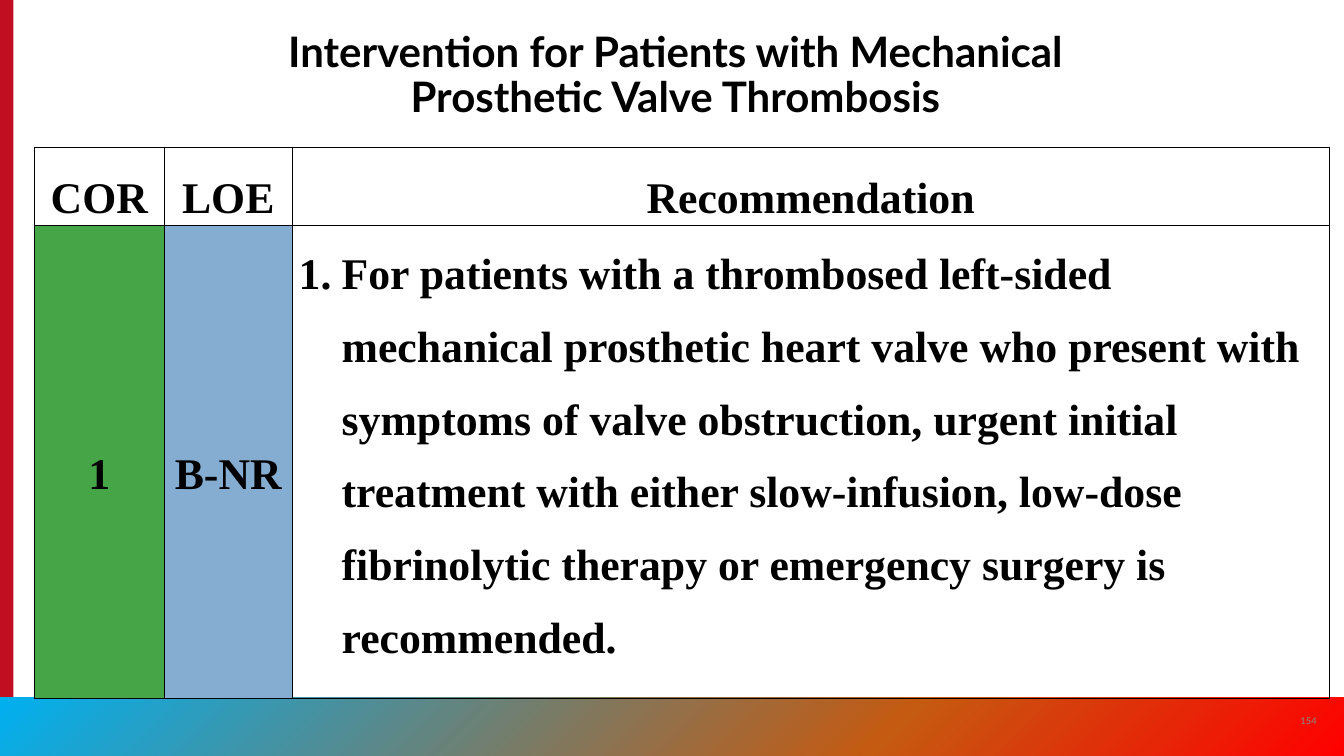
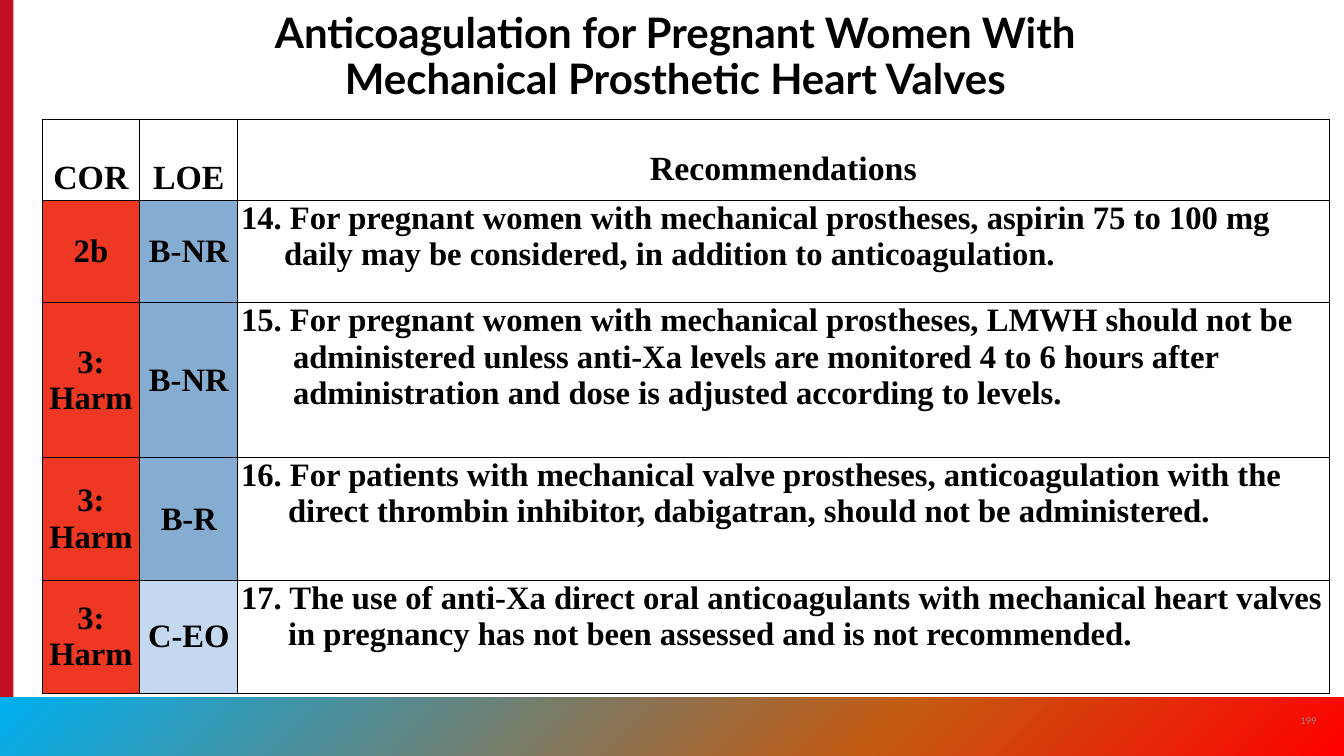
from lxml.etree import SubElement
from pptx import Presentation
from pptx.dml.color import RGBColor as RGB
from pptx.enum.shapes import MSO_SHAPE as SHAPE
from pptx.enum.text import MSO_ANCHOR as ANCHOR, PP_ALIGN as ALIGN
from pptx.oxml import parse_xml
from pptx.oxml.ns import nsdecls, qn
from pptx.util import Cm, Pt

COLORS = {
    "text": "000000", "border": "000000", "number": "8A8B8A", "bar": "C10E21",
    "1": "45A547", "2b": "EF3824", "3: Harm": "EF3824",
    "B-NR": "85ADD1", "B-R": "85ADD1", "C-EO": "C4D9F0",
}
BAND_STOPS = ((0, "00B0F0"), (66, "C55A11"), (100, "FF0000"))
WIDTH, HEIGHT = 40.64, 22.86
BAND_TOP = 21.08


class Deck:
    title_font = "Lato"
    table_font = "Times New Roman"

    def __init__(self):
        self.prs = Presentation()
        self.prs.slide_width, self.prs.slide_height = Cm(WIDTH), Cm(HEIGHT)
        self.s = None

    def slide(self, title, title_top, title_height, number):
        self.s = self.prs.slides.add_slide(self.prs.slide_layouts[6])
        bar = self.rect(0, 0, 0.41, HEIGHT)
        bar.fill.solid()
        bar.fill.fore_color.rgb = RGB.from_string(COLORS["bar"])
        self.gradient(self.rect(0, BAND_TOP, WIDTH, HEIGHT - BAND_TOP))
        self.text((5.72, title_top, 29.41, title_height), title, 36, "text", ANCHOR.BOTTOM, True, 0.9)
        self.text((38.96, 21.18, 1.22, 1.22), number, 8, "number", ANCHOR.MIDDLE)

    def rect(self, *box):
        sp = self.s.shapes.add_shape(SHAPE.RECTANGLE, *map(Cm, box))
        sp.shadow.inherit = False
        sp.line.fill.background()
        return sp

    def gradient(self, sp):
        stops = "".join(
            f'<a:gs pos="{pos * 1000}"><a:srgbClr val="{color}"/></a:gs>' for pos, color in BAND_STOPS)
        fill = parse_xml(
            f'<a:gradFill {nsdecls("a")} rotWithShape="1"><a:gsLst>{stops}</a:gsLst>'
            '<a:lin ang="2700000" scaled="0"/></a:gradFill>')
        sp.element.spPr.find(qn("a:prstGeom")).addnext(fill)

    def style(self, p, font, size, color, bold, align, spacing):
        p.alignment = align
        if spacing:
            p.line_spacing = spacing
        for r in p.runs:
            r.font.name, r.font.size, r.font.bold = font, Pt(size), bold
            r.font.color.rgb = RGB.from_string(COLORS[color])

    def text(self, box, text, size, color, anchor, bold=False, spacing=None):
        tf = self.s.shapes.add_textbox(*map(Cm, box)).text_frame
        tf.word_wrap = True
        tf.vertical_anchor = anchor
        tf.text = text
        self.style(tf.paragraphs[0], self.title_font, size, color, bold, ALIGN.CENTER, spacing)

    def borders(self, cell):
        tcPr = cell._tc.get_or_add_tcPr()
        for i, side in enumerate("LRTB"):
            tcPr.insert(i, parse_xml(
                f'<a:ln{side} {nsdecls("a")} w="12700"><a:solidFill>'
                f'<a:srgbClr val="{COLORS["border"]}"/></a:solidFill></a:ln{side}>'))

    def cell(self, cell, text, size, inset, spacing, indent=None, numbered=False):
        cell.margin_left = cell.margin_right = Cm(inset)
        cell.margin_top = cell.margin_bottom = 0
        cell.text = text
        p = cell.text_frame.paragraphs[0]
        if indent:
            pPr = p._p.get_or_add_pPr()
            pPr.set("marL", str(Cm(indent)))
            pPr.set("indent", str(-Cm(indent)))
            if numbered:
                SubElement(pPr, qn("a:buAutoNum"), type="arabicPeriod")
        cell.vertical_anchor = ANCHOR.TOP if indent else ANCHOR.MIDDLE
        if text in COLORS:
            cell.fill.solid()
            cell.fill.fore_color.rgb = RGB.from_string(COLORS[text])
        else:
            cell.fill.background()
        self.borders(cell)
        self.style(p, self.table_font, size, "text", True, ALIGN.LEFT if indent else ALIGN.CENTER, spacing)

    def table(self, left, top, cols, heights, inset, header, header_size, header_spacing,
              rows, size, spacing=None, numbered=False):
        frame = self.s.shapes.add_table(
            len(heights), len(cols), Cm(left), Cm(top), Cm(sum(cols)), Cm(sum(heights)))
        table = frame.table
        table.first_row = table.horz_banding = False
        for column, width in zip(table.columns, cols):
            column.width = Cm(width)
        for row, height in zip(table.rows, heights):
            row.height = Cm(height)
        for c, (label, gap) in enumerate(zip(header, header_spacing)):
            self.cell(table.cell(0, c), label, header_size, inset, gap)
        for r, (cor, loe, advice, indent) in enumerate(rows, 1):
            self.cell(table.cell(r, 0), cor, size, inset, spacing)
            self.cell(table.cell(r, 1), loe, size, inset, spacing)
            self.cell(table.cell(r, 2), advice, size, inset, spacing, indent, numbered)


def main():
    deck = Deck()

    deck.slide("Intervention for Patients with Mechanical Prosthetic Valve Thrombosis", 0.2, 3.61, "154")
    deck.table(
        1.05, 4.45, (3.91, 3.89, 31.34), (2.11, 13.26), 0.18,
        ("COR", "LOE", "Recommendation"), 37.5, (1.5, 1.5, 1.5),
        [("1", "B-NR",
          "For patients with a thrombosed left-sided mechanical prosthetic heart valve who present with "
          "symptoms of valve obstruction, urgent initial treatment with either slow-infusion, low-dose "
          "fibrinolytic therapy or emergency surgery is recommended.", 1.3)],
        37.5, 1.5, numbered=True)

    deck.slide("Anticoagulation for Pregnant Women With Mechanical Prosthetic Heart Valves", 0, 3.25, "199")
    deck.table(
        1.27, 3.6, (2.96, 2.96, 33), (2.24, 3.1, 4.67, 3.73, 3.4), 0.1,
        ("COR", "LOE", "Recommendations"), 29, (2.0, 2.0, 1.5),
        [("2b", "B-NR",
          "14. For pregnant women with mechanical prostheses, aspirin 75 to 100 mg daily may be "
          "considered, in addition to anticoagulation.", 1.3),
         ("3: Harm", "B-NR",
          "15. For pregnant women with mechanical prostheses, LMWH should not be administered unless "
          "anti-Xa levels are monitored 4 to 6 hours after administration and dose is adjusted "
          "according to levels.", 1.57),
         ("3: Harm", "B-R",
          "16. For patients with mechanical valve prostheses, anticoagulation with the direct thrombin "
          "inhibitor, dabigatran, should not be administered.", 1.42),
         ("3: Harm", "C-EO",
          "17. The use of anti-Xa direct oral anticoagulants with mechanical heart valves in pregnancy "
          "has not been assessed and is not recommended.", 1.42)],
        28)

    deck.prs.save("out.pptx")


if __name__ == "__main__":
    main()
